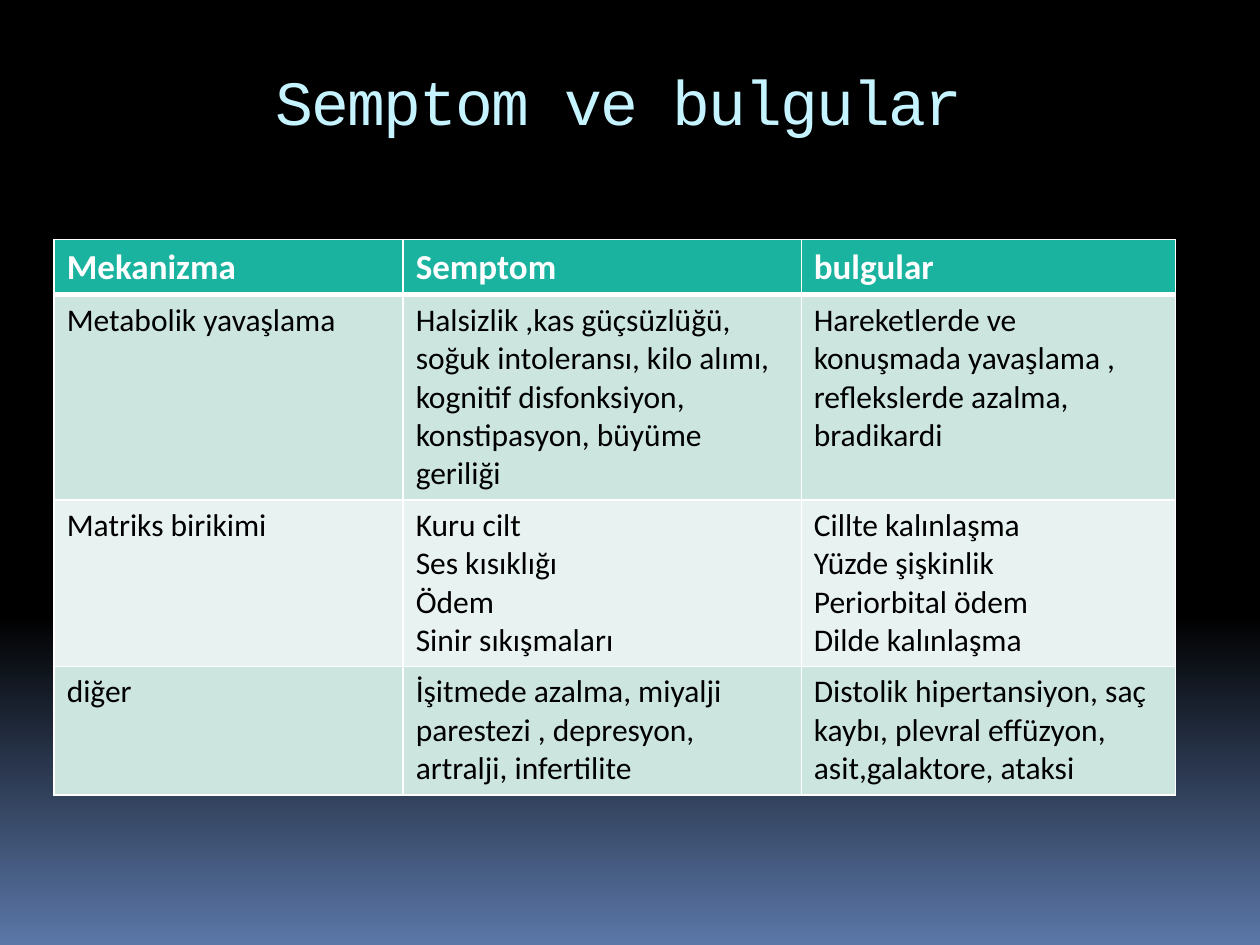
from copy import deepcopy

from lxml import etree
from pptx import Presentation
from pptx import util as u
from pptx.dml.color import RGBColor
from pptx.enum import text
from pptx.oxml import ns

TITLE = "Semptom ve bulgular"
HEADER = ["Mekanizma", "Semptom", "bulgular"]
ROWS = [
    [
        "Metabolik yavaşlama",
        "Halsizlik ,kas güçsüzlüğü, soğuk intoleransı, kilo alımı, "
        "kognitif disfonksiyon, konstipasyon, büyüme geriliği",
        "Hareketlerde ve konuşmada yavaşlama , reflekslerde azalma, bradikardi",
    ],
    [
        "Matriks birikimi",
        "Kuru cilt\nSes kısıklığı\nÖdem\nSinir sıkışmaları",
        "Cillte kalınlaşma\nYüzde şişkinlik\nPeriorbital ödem\nDilde kalınlaşma",
    ],
    [
        "diğer",
        "İşitmede azalma, miyalji parestezi , depresyon, artralji, infertilite",
        "Distolik hipertansiyon, saç kaybı, plevral effüzyon, asit,galaktore, ataksi",
    ],
]
COLUMN_WIDTHS = [2.77, 3.16, 2.97]
ROW_HEIGHTS = [0.44, 1.63, 1.32, 1.02]
TABLE_LEFT, TABLE_TOP = 0.43, 1.9

THEME = {
    "title_font": "Courier New",
    "body_font": "Calibri",
    "title_size": 36,
    "header_size": 20,
    "body_size": 18,
    "title": "C5F3FF",
    "header_text": "FFFFFF",
    "body_text": "000000",
    "header_fill": "1AB39F",
    "bands": ["CDE5DF", "E8F2F0"],
    "border": "FFFFFF",
    "background": [(0, "000000"), (0.65, "000000"), (1, "5B77A8")],
}


def rgb(name):
    return RGBColor.from_string(name)


def style(paragraph, font, size, color, bold=False):
    paragraph.font.name = font
    paragraph.font.size = u.Pt(size)
    paragraph.font.color.rgb = rgb(color)
    paragraph.font.bold = bold


def paint_background(slide):
    fill = slide.background.fill
    fill.gradient()
    fill.gradient_angle = 270
    stop_list = slide.background._cSld.find(".//" + ns.qn("a:gsLst"))
    stop_list.append(deepcopy(stop_list[-1]))
    for stop, (position, color) in zip(fill.gradient_stops, THEME["background"]):
        stop.position = position
        stop.color.rgb = rgb(color)


def add_title(slide):
    box = slide.shapes.add_textbox(*map(u.Inches, (2.09, 0.45, 5.82, 1.25)))
    frame = box.text_frame
    frame.word_wrap = True
    frame.vertical_anchor = text.MSO_ANCHOR.TOP
    frame.text = TITLE
    paragraph = frame.paragraphs[0]
    style(paragraph, THEME["title_font"], THEME["title_size"], THEME["title"])
    paragraph.runs[0].font._element.set("spc", "-100")


def set_borders(cell, bottom):
    properties = cell._tc.get_or_add_tcPr()
    widths = {"lnL": 1, "lnR": 1, "lnT": 1, "lnB": bottom}
    for index, (side, width) in enumerate(widths.items()):
        line = etree.Element(ns.qn("a:" + side), w=str(u.Pt(width)))
        solid = etree.SubElement(line, ns.qn("a:solidFill"))
        etree.SubElement(solid, ns.qn("a:srgbClr"), val=THEME["border"])
        properties.insert(index, line)


def fill_cell(cell, content, row):
    header = row == 0
    cell.text = content
    size = THEME["header_size" if header else "body_size"]
    color = THEME["header_text" if header else "body_text"]
    for paragraph in cell.text_frame.paragraphs:
        style(paragraph, THEME["body_font"], size, color, header)
    cell.fill.solid()
    band = THEME["bands"][(row - 1) % 2]
    cell.fill.fore_color.rgb = rgb(THEME["header_fill"] if header else band)
    set_borders(cell, 3 if header else 1)


def add_symptom_table(slide):
    contents = [HEADER] + ROWS
    size = (sum(COLUMN_WIDTHS), sum(ROW_HEIGHTS))
    table = slide.shapes.add_table(
        len(contents), len(HEADER), *map(u.Inches, (TABLE_LEFT, TABLE_TOP, *size))
    ).table
    for column, width in zip(table.columns, COLUMN_WIDTHS):
        column.width = u.Inches(width)
    for row, height in zip(table.rows, ROW_HEIGHTS):
        row.height = u.Inches(height)
    for row, values in enumerate(contents):
        for column, content in enumerate(values):
            fill_cell(table.cell(row, column), content, row)


def main():
    presentation = Presentation()
    presentation.slide_width = u.Inches(10)
    presentation.slide_height = u.Inches(7.5)
    slide = presentation.slides.add_slide(presentation.slide_layouts[6])
    paint_background(slide)
    add_title(slide)
    add_symptom_table(slide)
    presentation.save("out.pptx")


if __name__ == "__main__":
    main()
